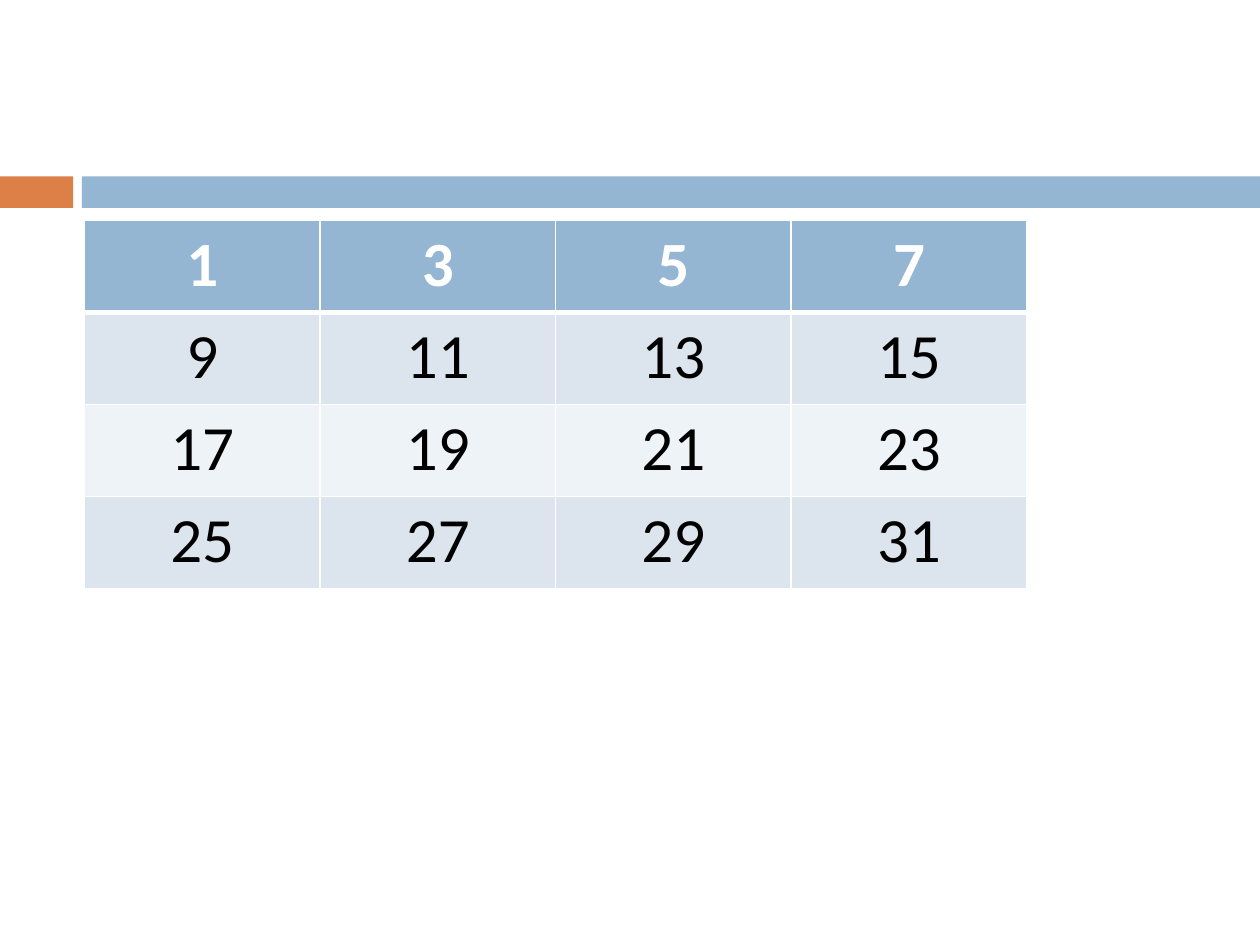
import lxml.etree
import pptx
import pptx.dml.color
import pptx.enum.shapes
import pptx.enum.text
import pptx.oxml.ns
import pptx.util

Inches = pptx.util.Inches
Pt = pptx.util.Pt
COLORS = {
    "white": "FFFFFF",
    "black": "000000",
    "orange": "DD8047",
    "blue": "94B6D2",
    "band_dark": "DCE5EE",
    "band_light": "EEF3F7",
}
ROWS, COLUMNS = 4, 4
COLUMN_WIDTH, ROW_HEIGHT = 1.87, 0.73


def rgb(name):
    return pptx.dml.color.RGBColor.from_string(COLORS[name])


def write_text(text_frame, text, *, size=36, color="black", bold=False):
    paragraph = text_frame.paragraphs[0]
    paragraph.alignment = pptx.enum.text.PP_ALIGN.CENTER
    run = paragraph.add_run()
    run.text = text
    run.font.name = "Calibri"
    run.font.size = Pt(size)
    run.font.bold = bold
    run.font.color.rgb = rgb(color)


presentation = pptx.Presentation()
presentation.slide_width = Inches(10)
presentation.slide_height = Inches(7.5)
slide = presentation.slides.add_slide(presentation.slide_layouts[6])

# Title band
for left, width, color in [(0, 0.58, "orange"), (0.65, 9.35, "blue")]:
    band = slide.shapes.add_shape(
        pptx.enum.shapes.MSO_SHAPE.RECTANGLE,
        Inches(left), Inches(1.4), Inches(width), Inches(0.25))
    band.shadow.inherit = False
    band.fill.solid()
    band.fill.fore_color.rgb = rgb(color)
    band.line.fill.background()

# Table of consecutive odd numbers
table = slide.shapes.add_table(
    ROWS, COLUMNS, Inches(0.67), Inches(1.75),
    Inches(COLUMNS * COLUMN_WIDTH), Inches(ROWS * ROW_HEIGHT)).table
for column in table.columns:
    column.width = Inches(COLUMN_WIDTH)
for row in table.rows:
    row.height = Inches(ROW_HEIGHT)

qn = pptx.oxml.ns.qn
row_fills = ["blue", "band_dark", "band_light", "band_dark"]
for row_index, fill in enumerate(row_fills):
    is_header = row_index == 0
    border_widths = {
        "a:lnL": 1,
        "a:lnR": 1,
        "a:lnT": 3 if row_index == 1 else 1,
        "a:lnB": 3 if is_header else 1,
    }
    for column_index in range(COLUMNS):
        cell = table.cell(row_index, column_index)
        number = 2 * (row_index * COLUMNS + column_index) + 1
        write_text(cell.text_frame, str(number),
                   color="white" if is_header else "black", bold=is_header)
        properties = cell._tc.get_or_add_tcPr()
        for side, width in border_widths.items():
            border = lxml.etree.SubElement(properties, qn(side), w=str(Pt(width)))
            border_fill = lxml.etree.SubElement(border, qn("a:solidFill"))
            lxml.etree.SubElement(border_fill, qn("a:srgbClr"), val=COLORS["white"])
        cell.fill.solid()
        cell.fill.fore_color.rgb = rgb(fill)

presentation.save("out.pptx")
